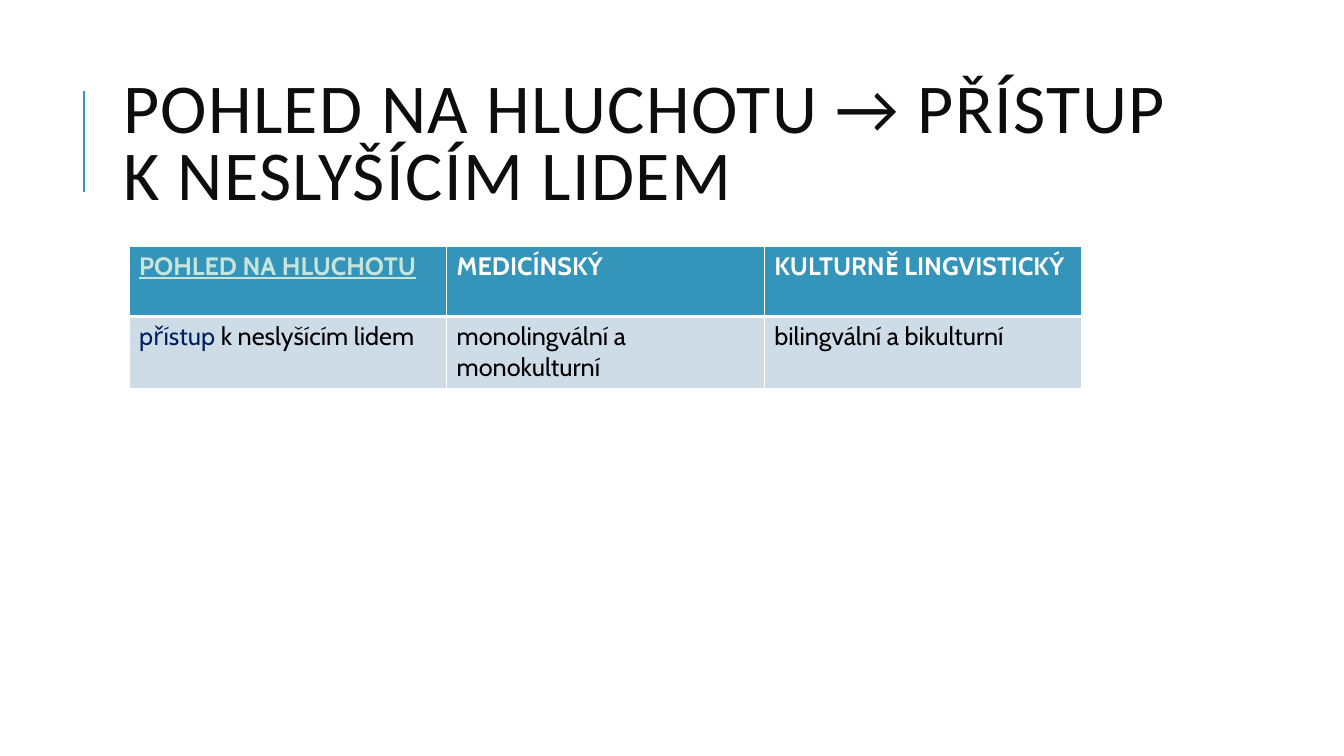
from dataclasses import dataclass

from lxml import etree
from pptx import Presentation
from pptx.dml.color import RGBColor
from pptx.enum.shapes import MSO_CONNECTOR
from pptx.enum.text import MSO_ANCHOR, MSO_AUTO_SIZE, PP_ALIGN
from pptx.oxml.ns import qn
from pptx.util import Inches, Pt

STRAIGHT = MSO_CONNECTOR.STRAIGHT
MIDDLE = MSO_ANCHOR.MIDDLE
NO_FIT = MSO_AUTO_SIZE.NONE
LEFT = PP_ALIGN.LEFT

COLORS = {
    "white": "FFFFFF",
    "black": "000000",
    "title": "0D0D0D",
    "accent": "3494BA",
    "band": "CEDCE7",
    "mint": "C7E4DB",
    "navy": "002060",
}
TITLE_FORMAT = {"name": "Calibri", "size": Pt(50), "bold": False}
HEAD_FORMAT = {"name": "Cabin", "size": Pt(18), "bold": True}
BODY_FORMAT = {"name": "Cabin", "size": Pt(18), "bold": False}


@dataclass
class Span:
    text: str
    color: str
    underline: bool = False


@dataclass
class Row:
    cells: list[list[Span]]
    fill: str
    format: dict
    borders: dict[str, float]


ROWS = [
    Row(
        [
            [Span("POHLED NA HLUCHOTU", "mint", True)],
            [Span("MEDICÍNSKÝ", "white")],
            [Span("KULTURNĚ LINGVISTICKÝ", "white")],
        ],
        "accent",
        HEAD_FORMAT,
        {"L": 1, "R": 1, "T": 1, "B": 3},
    ),
    Row(
        [
            [Span("přístup ", "navy"), Span("k neslyšícím lidem", "black")],
            [Span("monolingvální a monokulturní", "black")],
            [Span("bilingvální a bikulturní", "black")],
        ],
        "band",
        BODY_FORMAT,
        {"L": 1, "R": 1, "T": 3, "B": 1},
    ),
]


def rgb(color: str) -> RGBColor:
    return RGBColor.from_string(COLORS[color])


def add_run(p, span: Span, format: dict):
    r = p.add_run()
    r.text = span.text
    for name, value in format.items():
        setattr(r.font, name, value)
    r.font.underline = span.underline
    r.font.color.rgb = rgb(span.color)
    return r


def add_borders(cell, borders: dict[str, float]) -> None:
    tc_pr = cell._tc.get_or_add_tcPr()
    for side, width in borders.items():
        ln = etree.SubElement(tc_pr, qn(f"a:ln{side}"), w=str(Pt(width)))
        fill = etree.SubElement(ln, qn("a:solidFill"))
        etree.SubElement(fill, qn("a:srgbClr"), val=COLORS["white"])


def add_title(s) -> None:
    sp = s.shapes.title
    sp.left, sp.top = Inches(1.12), Inches(0.64)
    sp.width, sp.height = Inches(10.63), Inches(1.64)
    tf = sp.text_frame
    tf.word_wrap = True
    tf.auto_size = NO_FIT
    tf.vertical_anchor = MIDDLE
    p = tf.paragraphs[0]
    p.alignment = LEFT
    p.line_spacing = 0.8
    span = Span("POHLED NA HLUCHOTU → PŘÍSTUP K NESLYŠÍCÍM LIDEM", "title")
    r = add_run(p, span, TITLE_FORMAT)
    r.font._element.set("spc", "100")


def add_title_rule(s) -> None:
    x = Inches(0.83)
    line = s.shapes.add_connector(STRAIGHT, x, Inches(1.9), x, Inches(0.9))
    line.line.color.rgb = rgb("accent")
    line.line.width = Pt(1.5)
    etree.SubElement(line._element.spPr, qn("a:effectLst"))


def add_approach_table(s) -> None:
    frame = s.shapes.add_table(
        len(ROWS), len(ROWS[0].cells),
        Inches(1.28), Inches(2.44), Inches(9.45), Inches(1.4),
    )
    table = frame.table
    for i, row in enumerate(ROWS):
        for j, spans in enumerate(row.cells):
            cell = table.cell(i, j)
            add_borders(cell, row.borders)
            cell.fill.solid()
            cell.fill.fore_color.rgb = rgb(row.fill)
            for span in spans:
                add_run(cell.text_frame.paragraphs[0], span, row.format)


def main() -> None:
    prs = Presentation()
    prs.slide_width, prs.slide_height = Inches(13.33), Inches(7.5)
    s = prs.slides.add_slide(prs.slide_layouts[5])
    add_title_rule(s)
    add_title(s)
    add_approach_table(s)
    prs.save("out.pptx")


if __name__ == "__main__":
    main()
